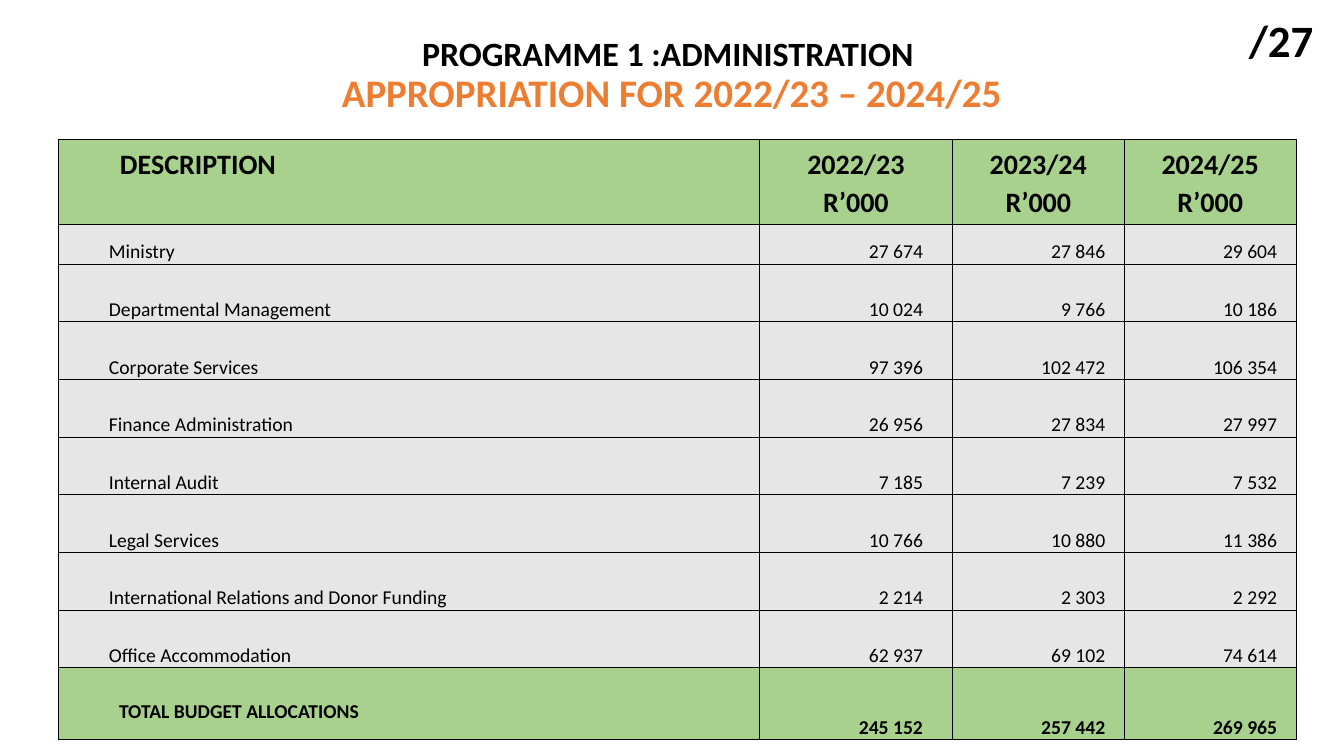
"""Build the Programme 1 appropriation slide with its budget table."""
from lxml import etree
from pptx import Presentation
from pptx.dml.color import RGBColor
from pptx.enum.shapes import MSO_SHAPE
from pptx.enum.text import MSO_ANCHOR, MSO_AUTO_SIZE, PP_ALIGN
from pptx.oxml.ns import qn
from pptx.util import Pt

RECTANGLE = MSO_SHAPE.RECTANGLE
LEFT, CENTER, RIGHT = PP_ALIGN.LEFT, PP_ALIGN.CENTER, PP_ALIGN.RIGHT
TOP, BOTTOM = MSO_ANCHOR.TOP, MSO_ANCHOR.BOTTOM
COLORS = {"ink": "000000", "accent": "ED7D31", "green": "A9D18E", "gray": "E7E6E6",
          "white": "FFFFFF"}

YEARS = ["2022/23", "2023/24", "2024/25"]
BUDGET = [
    ("Ministry", "27 674", "27 846", "29 604"),
    ("Departmental Management", "10 024", "9 766", "10 186"),
    ("Corporate Services", "97 396", "102 472", "106 354"),
    ("Finance Administration", "26 956", "27 834", "27 997"),
    ("Internal Audit", "7 185", "7 239", "7 532"),
    ("Legal Services", "10 766", "10 880", "11 386"),
    ("International Relations and Donor Funding", "2 214", "2 303", "2 292"),
    ("Office Accommodation", "62 937", "69 102", "74 614"),
    ("TOTAL BUDGET ALLOCATIONS", "245 152", "257 442", "269 965"),
]
COLUMN_WIDTHS = [500.7, 137.8, 122.8, 122.8]
ROW_HEIGHTS = [60.6, 28.2] + [41.2] * 7 + [51.2]
NUMBER_INSETS = [21, 13.6, 13.6]


def write(frame, text, size=14, bold=False, color="ink", align=LEFT, spacing=1.0,
          same_paragraph=False):
    """Write each line as a paragraph, or after a break in the last paragraph."""
    for number, line in enumerate(text.split("\n")):
        paragraph = frame.add_paragraph() if number else frame.paragraphs[-1]
        if same_paragraph:
            paragraph.add_line_break()
        paragraph.alignment = align
        paragraph.line_spacing = spacing
        paragraph.space_before = Pt(0)
        run = paragraph.add_run()
        run.text = line
        run.font.name = "Calibri"
        run.font.size = Pt(size)
        run.font.bold = bold
        run.font.color.rgb = RGBColor.from_string(COLORS[color])


def style_cell(cell, fill, anchor, insets):
    """Set the borders, fill, anchor and insets of a table cell."""
    properties = cell._tc.get_or_add_tcPr()
    for side in ("lnL", "lnR", "lnT", "lnB"):
        border = etree.SubElement(properties, qn(f"a:{side}"), w=str(Pt(1)))
        solid = etree.SubElement(border, qn("a:solidFill"))
        etree.SubElement(solid, qn("a:srgbClr"), val=COLORS["ink"])
    cell.fill.solid()
    cell.fill.fore_color.rgb = RGBColor.from_string(COLORS[fill])
    cell.vertical_anchor = anchor
    cell.margin_left, cell.margin_top, cell.margin_right, cell.margin_bottom = map(Pt, insets)


presentation = Presentation()
presentation.slide_width, presentation.slide_height = Pt(960), Pt(540)
slide = presentation.slides.add_slide(presentation.slide_layouts[5])

title = slide.shapes.title
title.left, title.top, title.width, title.height = Pt(16.5), Pt(5), Pt(926.5), Pt(72)
heading = title.text_frame
heading.auto_size = MSO_AUTO_SIZE.NONE
heading.vertical_anchor = TOP
heading.margin_top, heading.margin_bottom = Pt(21.2), Pt(0)
write(heading, "PROGRAMME 1 :ADMINISTRATION ", size=24.3, bold=True, align=CENTER, spacing=0.9)
write(heading, "APPROPRIATION FOR 2022/23 – 2024/25", size=27.9, bold=True,
      color="accent", align=CENTER, spacing=0.9, same_paragraph=True)

table_panel = slide.shapes.add_shape(RECTANGLE, Pt(0), Pt(82.8), Pt(960), Pt(457.2))

budget_table = slide.shapes.add_table(
    len(ROW_HEIGHTS), len(COLUMN_WIDTHS), Pt(41.8), Pt(99.4),
    Pt(sum(COLUMN_WIDTHS)), Pt(sum(ROW_HEIGHTS))).table
for column, width in zip(budget_table.columns, COLUMN_WIDTHS):
    column.width = Pt(width)
for row, height in zip(budget_table.rows, ROW_HEIGHTS):
    row.height = Pt(height)

headers = ["DESCRIPTION"] + [f"{year}\nR’000" for year in YEARS]
for column, header in enumerate(headers):
    cell = budget_table.cell(0, column)
    style_cell(cell, "green", TOP, (7.2 if column else 43.9, 3.6, 7.2, 3.6))
    write(cell.text_frame, header, size=20, bold=True,
          align=CENTER if column else LEFT, spacing=1.1)

for row, (description, *amounts) in enumerate(BUDGET, start=1):
    is_total = row == len(BUDGET)
    fill = "green" if is_total else "gray"
    label = budget_table.cell(row, 0)
    style_cell(label, fill, BOTTOM, (43.2, 0, 0, 11.5) if is_total else (36, 0, 0, 0))
    write(label.text_frame, description, bold=is_total)
    for column, (amount, inset) in enumerate(zip(amounts, NUMBER_INSETS), start=1):
        cell = budget_table.cell(row, column)
        style_cell(cell, fill, BOTTOM, (0, 0, inset, 0))
        write(cell.text_frame, amount, bold=is_total, align=RIGHT)

page_number = slide.shapes.add_shape(RECTANGLE, Pt(882), Pt(5.4), Pt(66.2), Pt(35.3))
page_number.text_frame.word_wrap = True
page_number.text_frame.vertical_anchor = TOP
write(page_number.text_frame, "/27", size=32, bold=True, align=CENTER)

for box in (title, table_panel, page_number):
    box.fill.solid()
    box.fill.fore_color.rgb = RGBColor.from_string(COLORS["white"])
    box.line.fill.background()
for box in (table_panel, page_number):
    box.shadow.inherit = False

presentation.save("out.pptx")
